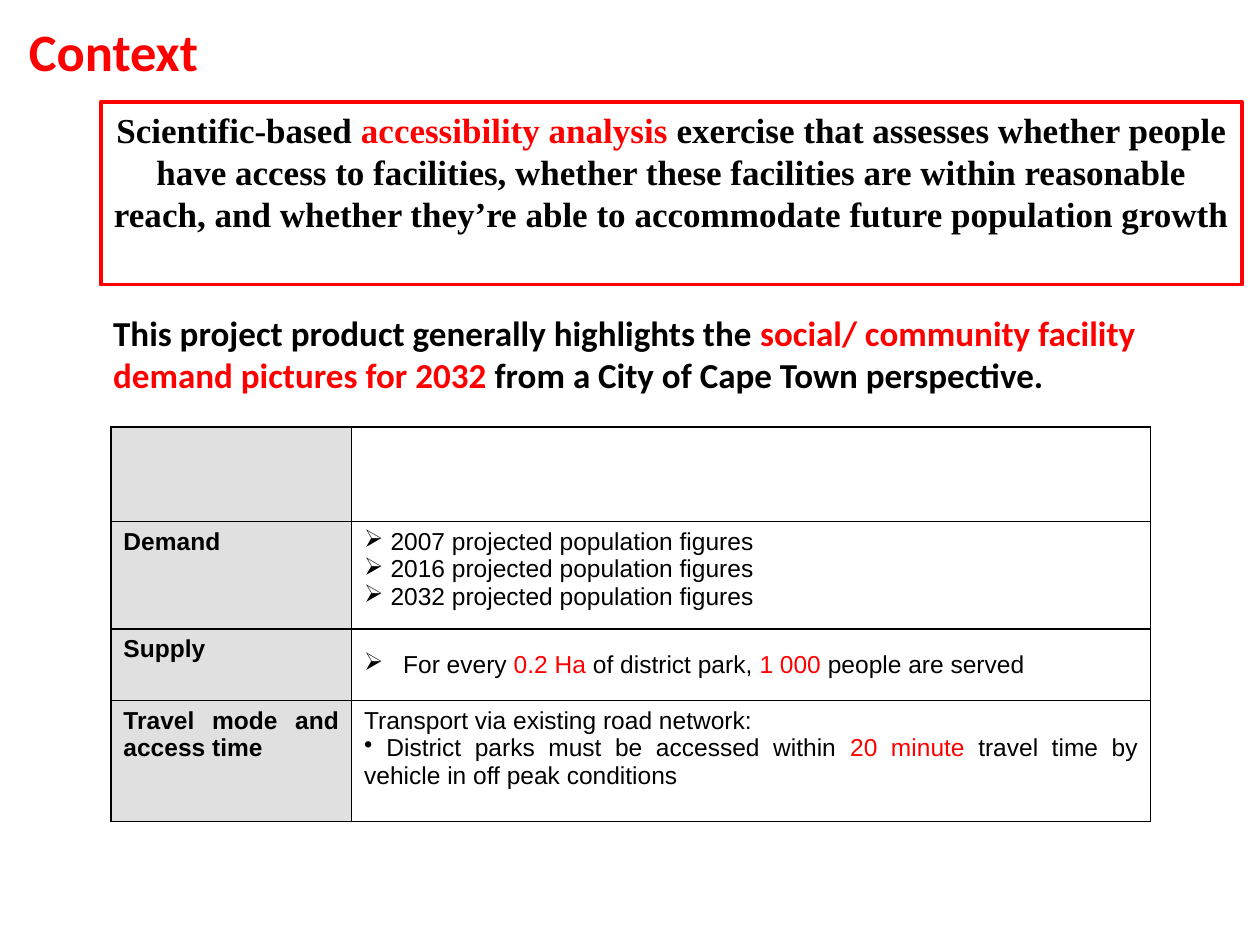
import pptx
import pptx.dml.color
import pptx.enum.shapes
import pptx.enum.text
import pptx.oxml
import pptx.oxml.ns
import pptx.util
from dataclasses import dataclass

ALIGN = pptx.enum.text.PP_ALIGN
ANCHOR = pptx.enum.text.MSO_ANCHOR
Inches = pptx.util.Inches


@dataclass(frozen=True)
class Theme:
    black: str = "000000"
    red: str = "FF0000"
    label_fill: str = "E0E0E0"
    paper: str = "FFFFFF"
    title_size: int = 30
    body_size: int = 20
    table_size: int = 14
    sans: str = "Calibri"
    serif: str = "Times New Roman"
    table_font: str = "Arial"


THEME = Theme()
LEFT, WIDTH = 0.8, 9.06  # column shared by both statements
COLUMNS = (1.91, 6.34)
ROWS = (0.75, 0.85, 0.57, 0.96)

# Text is a list of pieces; every second piece is highlighted
STATEMENT = [
    "Scientific-based ", "accessibility analysis ",
    "exercise that assesses whether people have access to facilities, whether "
    "these facilities are within reasonable reach, and whether they’re able to "
    "accommodate future population growth"]
PRODUCT = [
    "This project product generally highlights the ",
    "social/ community facility demand pictures for 2032 ",
    "from a City of Cape Town perspective."]

# Label, anchor, and paragraphs of (pieces, bullet, hanging indent)
CRITERIA = [
    ("Demand", ANCHOR.TOP,
     [([f"{year} projected population figures"], "➢", 0.21)
      for year in (2007, 2016, 2032)]),
    ("Supply", ANCHOR.MIDDLE,
     [(["For every ", "0.2 Ha ", "of district park, ", "1 000 ",
        "people are served"], "➢", 0.31)]),
    ("Travel mode and access time", ANCHOR.TOP,
     [(["Transport via existing road network:"], None, 0),
      ([" District parks must be accessed within ", "20 minute",
        " travel time by vehicle in off peak conditions"], "•", 0)]),
]


def color(value):
    return pptx.dml.color.RGBColor.from_string(value)


def write(paragraph, pieces, font, size, bold=True, align=ALIGN.LEFT):
    """Fill a paragraph, alternating plain and highlighted pieces."""
    paragraph.alignment = align
    paragraph.font.name = font
    paragraph.font.size = pptx.util.Pt(size)
    paragraph.font.bold = bold
    for index, piece in enumerate(pieces):
        run = paragraph.add_run()
        run.text = piece
        run.font.color.rgb = color(THEME.red if index % 2 else THEME.black)


def add_bullet(paragraph, character, indent):
    properties = paragraph._p.get_or_add_pPr()
    properties.set("marL", str(Inches(indent)))
    properties.set("indent", str(-Inches(indent)))
    bullet = pptx.oxml.parse_xml(
        f'<a:buChar {pptx.oxml.ns.nsdecls("a")} char="{character}"/>')
    properties.append(bullet)


def set_borders(cell):
    properties = cell._tc.get_or_add_tcPr()
    for index, side in enumerate("LRTB"):
        properties.insert(index, pptx.oxml.parse_xml(
            f'<a:ln{side} {pptx.oxml.ns.nsdecls("a")} w="12700"><a:solidFill>'
            f'<a:srgbClr val="{THEME.black}"/></a:solidFill></a:ln{side}>'))


def add_title(slide, text):
    title = slide.shapes.title
    title.left, title.top = Inches(0.13), Inches(0.1)
    title.width, title.height = Inches(2.89), Inches(0.8)
    title.text_frame.vertical_anchor = ANCHOR.TOP
    title.text_frame.text = text
    paragraph = title.text_frame.paragraphs[0]
    paragraph.alignment = ALIGN.LEFT
    paragraph.font.name = THEME.sans
    paragraph.font.size = pptx.util.Pt(THEME.title_size)
    paragraph.font.bold = True
    paragraph.font.color.rgb = color(THEME.red)


def add_statement(slide, pieces, top, height, font, align, framed=False):
    box = (Inches(LEFT), Inches(top), Inches(WIDTH), Inches(height))
    if framed:
        shape = slide.shapes.add_shape(
            pptx.enum.shapes.MSO_SHAPE.RECTANGLE, *box)
        shape.shadow.inherit = False
        shape.fill.background()
        shape.line.color.rgb = color(THEME.red)
        shape.line.width = pptx.util.Pt(2)
    else:
        shape = slide.shapes.add_textbox(*box)
    frame = shape.text_frame
    frame.word_wrap = True
    frame.vertical_anchor = ANCHOR.TOP
    write(frame.paragraphs[0], pieces, font, THEME.body_size, align=align)


def add_criteria_table(slide):
    table = slide.shapes.add_table(
        len(ROWS), len(COLUMNS), Inches(0.88), Inches(3.39),
        Inches(sum(COLUMNS)), Inches(sum(ROWS))).table
    for column, width in zip(table.columns, COLUMNS):
        column.width = Inches(width)
    for row, height in zip(table.rows, ROWS):
        row.height = Inches(height)
        for cell, fill in zip(row.cells, (THEME.label_fill, THEME.paper)):
            cell.fill.solid()
            cell.fill.fore_color.rgb = color(fill)
            set_borders(cell)

    # The first row stays empty
    for row, (label, anchor, details) in enumerate(CRITERIA, start=1):
        write(table.cell(row, 0).text_frame.paragraphs[0], [label],
              THEME.table_font, THEME.table_size, align=ALIGN.JUSTIFY)
        cell = table.cell(row, 1)
        cell.vertical_anchor = anchor
        frame = cell.text_frame
        for index, (pieces, bullet, indent) in enumerate(details):
            paragraph = frame.add_paragraph() if index else frame.paragraphs[0]
            if bullet:
                add_bullet(paragraph, bullet, indent)
            write(paragraph, pieces, THEME.table_font, THEME.table_size,
                  bold=False, align=ALIGN.JUSTIFY)


def main():
    presentation = pptx.Presentation()
    presentation.slide_width = Inches(10)
    presentation.slide_height = Inches(7.5)
    slide = presentation.slides.add_slide(presentation.slide_layouts[5])
    add_title(slide, "Context")
    add_statement(slide, STATEMENT, 0.81, 1.45, THEME.serif, ALIGN.CENTER,
                  framed=True)
    add_statement(slide, PRODUCT, 2.42, 0.77, THEME.sans, ALIGN.LEFT)
    add_criteria_table(slide)
    presentation.save("out.pptx")


if __name__ == "__main__":
    main()
